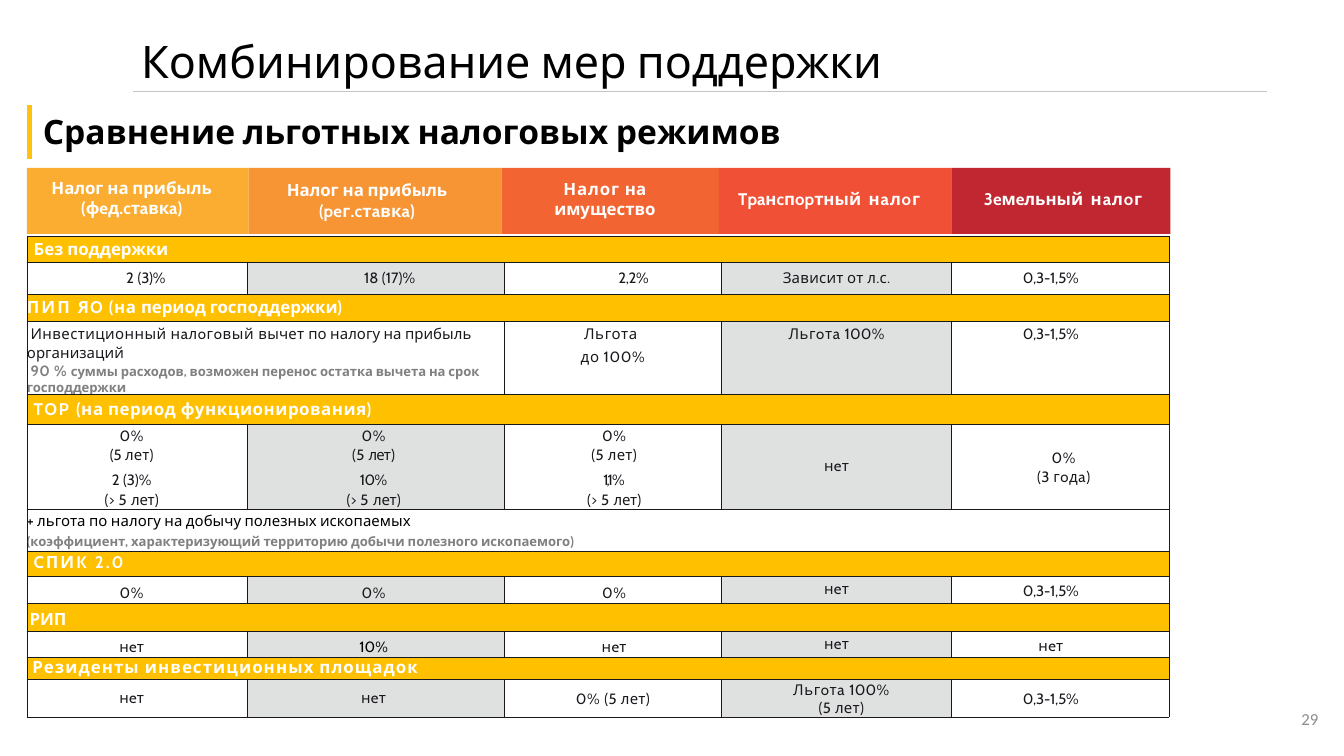
from dataclasses import dataclass
from itertools import pairwise

from lxml.etree import SubElement
from pptx import Presentation
from pptx.dml.color import RGBColor
from pptx.enum.shapes import MSO_CONNECTOR, MSO_SHAPE
from pptx.enum.text import MSO_ANCHOR as ANCHOR, MSO_AUTO_SIZE as FIT, PP_ALIGN as ALIGN
from pptx.oxml.ns import qn
from pptx.util import Inches, Pt

YELLOW, GREY, DARK, WHITE, BLACK, MUTED = "FFC000", "DFE1E1", "1A181D", "FFFFFF", "000000", "808080"
TABLE_LEFT, TABLE_TOP = 0.2, 1.76
COLUMNS = [1.64, 1.91, 1.62, 1.71, 1.62]
RIGHT_MARGINS = [0.08, 0.05, 0, 0, 0.14]
ROWS = [0.19, 0.24, 0.2, 0.54, 0.22, 0.63, 0.31, 0.19, 0.2, 0.21, 0.19, 0.17, 0.28]
HEADER_EDGES = [0.2, 1.85, 3.73, 5.35, 7.08, 8.71]


@dataclass
class Para:
    runs: list
    size: float = 8
    color: str = DARK
    bold: bool = False
    align: ALIGN = ALIGN.CENTER
    indent: float = 0
    before: float = 0
    line: float = 0
    font: str = "Cabin"


@dataclass
class Cell:
    paras: list
    top: float = 0
    anchor: ANCHOR = ANCHOR.MIDDLE
    span: int = 1
    fill: str = ""


def rgb(value):
    return RGBColor.from_string(value)


def write(tf, paras):
    for i, para in enumerate(paras):
        p = tf.paragraphs[0] if i == 0 else tf.add_paragraph()
        p.alignment = para.align
        p.space_before = Pt(para.before)
        if para.line:
            p.line_spacing = Pt(para.line)
        if para.indent:
            p._p.get_or_add_pPr().set("marL", str(Inches(para.indent)))
        p.font.size, p.font.bold, p.font.name = Pt(para.size), para.bold, para.font
        p.font.color.rgb = rgb(para.color)
        for text, spacing, *size in para.runs:
            r = p.add_run()
            r.text = text
            if spacing:
                r._r.get_or_add_rPr().set("spc", str(round(spacing * 100)))
            if size:
                r.font.size = Pt(size[0])


def add_text(s, box, paras, anchor=ANCHOR.TOP, margin=None):
    tf = s.shapes.add_textbox(*map(Inches, box)).text_frame
    tf.word_wrap = True
    tf.vertical_anchor = anchor
    if margin is not None:
        tf.margin_left = tf.margin_right = tf.margin_top = tf.margin_bottom = Inches(margin)
    write(tf, paras)


def add_title(s, box, para):
    sp = s.shapes.title
    sp.left, sp.top, sp.width, sp.height = map(Inches, box)
    tf = sp.text_frame
    tf.auto_size = FIT.NONE
    tf.vertical_anchor = ANCHOR.TOP
    write(tf, [para])


def add_line(s, x1, y1, x2, y2, color, width):
    line = s.shapes.add_connector(MSO_CONNECTOR.STRAIGHT, *map(Inches, (x1, y1, x2, y2)))
    line.line.color.rgb = rgb(color)
    line.line.width = Pt(width)
    SubElement(line._element.spPr, qn("a:effectLst"))


def add_header_box(s, left, right, color):
    sp = s.shapes.add_shape(MSO_SHAPE.RECTANGLE, *map(Inches, (left, 1.25, right - left, 0.49)))
    sp.shadow.inherit = False
    sp.fill.solid()
    sp.fill.fore_color.rgb = rgb(color)
    sp.line.fill.background()


def add_header_text(s, center, middle, width, lines):
    height = 0.15 * len(lines)
    box = (center - width / 2, middle - height / 2, width, height)
    add_text(s, box, [Para(runs, 9, WHITE, True) for runs in lines], margin=0)


def set_borders(cell):
    tcPr = cell._tc.get_or_add_tcPr()
    for i, side in enumerate(("a:lnL", "a:lnR", "a:lnT", "a:lnB")):
        ln = SubElement(tcPr, qn(side), w=str(Pt(0.25)))
        tcPr.insert(i, ln)
        SubElement(SubElement(ln, qn("a:solidFill")), qn("a:srgbClr"), val=DARK)


def fill_cell(cell, content, fill, right):
    cell.margin_left = cell.margin_bottom = 0
    cell.margin_right = Inches(right)
    cell.margin_top = Inches(content.top)
    cell.vertical_anchor = content.anchor
    write(cell.text_frame, content.paras)
    if fill:
        cell.fill.solid()
        cell.fill.fore_color.rgb = rgb(fill)
    else:
        cell.fill.background()


def add_grid(s, rows):
    size = (TABLE_LEFT, TABLE_TOP, sum(COLUMNS), sum(ROWS))
    table = s.shapes.add_table(len(ROWS), len(COLUMNS), *map(Inches, size)).table
    table.first_row = table.horz_banding = False
    for column, width in zip(table.columns, COLUMNS):
        column.width = Inches(width)
    for i, (height, cells) in enumerate(zip(ROWS, rows)):
        table.rows[i].height = Inches(height)
        j = 0
        for content in cells:
            cell = table.cell(i, j)
            if content.span > 1:
                cell.merge(table.cell(i, j + content.span - 1))
            right = RIGHT_MARGINS[j] if content.span == 1 else 0
            fill_cell(cell, content, content.fill or (GREY if j in (1, 3) else ""), right)
            j += content.span
        for cell in table.rows[i].cells:
            set_borders(cell)


def band(*runs, indent=0.05, line=0, top=0, anchor=ANCHOR.MIDDLE):
    para = Para(list(runs), 9, WHITE, True, ALIGN.LEFT, indent, line=line)
    return [Cell([para], top, anchor, 5, YELLOW)]


def value(*runs, top=0, indent=0, color=DARK):
    anchor = ANCHOR.TOP if top else ANCHOR.MIDDLE
    return Cell([Para(list(runs), color=color, indent=indent)], top, anchor)


def terms(*lines, indent=0.02):
    return Cell([Para(runs, indent=indent, line=10.4, before=3.2 if i == 2 else 0)
                 for i, runs in enumerate(lines)], 0.01)


def note(text, **style):
    return Para(text, align=ALIGN.LEFT, **style)


def table_rows():
    no, zero, land = ("нeт", 0.1), ("0%", 0.3), ("0,3-1,5%", -0.1)
    five = [("(5 ", 0.2), ("лет)", 0.1)]
    after = [("(> ", 0.1), ("5 ", 0.3), ("лет", -0.2), (")", 0.1)]
    deduction = Cell([
        note([(" Инвестиционный ", 0.2), ("нaлoгoвый ", 0.3), ("вычет ", 0.1),
              ("по налогу на прибыль организаций", 0)]),
        note([(" 90 % ", 0.2, 8),
              ("суммы расходов, возможен перенос остатка вычета на срок господдержки", 0)],
             size=7, color=MUTED, bold=True)], 0.03, ANCHOR.TOP, 2)
    relief = Cell([Para([(text, 0.3)], before=2.5) for text in ("Льгота ", "до 100%")], 0.03, ANCHOR.TOP)
    mining = Cell([
        note([("+ льгота по налогу на добычу полезных ископаемых", 0)], color=BLACK, line=10.4),
        note([("(коэффициент, характеризующий территорию добычи полезного ископаемого)", 0)],
             size=7, color=MUTED, bold=True, line=10.4)], 0.01, span=5)
    full = [("Льгoтa ", 0.3), ("100%", 0.1)]
    return [
        band(("Без поддержки", 0), line=11),
        [value(("2 ", 0.1), ("(3)%", -0.1), indent=0.21), value(("18 (17)%", 0), indent=0.26),
         value(("2,2%", -0.2), indent=0.31), value(("Зависит от л.с.", 0.1)), value(land)],
        band(("ПИП ", 1.1), ("ЯO ", 0.6), ("(на ", 0.3), ("период господдержки", 0), (")", 0.6), indent=0),
        [deduction, relief, value(*full, top=0.03), value(land, top=0.03)],
        band(("TOP ", 0.9), ("(на период функционирования", 0.3), (")", 0.5), line=11.3),
        [terms([zero], [("(5 лет)", 0)], [("2 (3)%", 0)], after, indent=0),
         terms([zero], [("(5 ", 0.2), ("лет", -0.5), (")", 0.1)], [("10%", -0.3)], after),
         terms([zero], five, [("1,1 %", -1.1)], after),
         value(no), terms([zero], [("(3 ", 0.1), ("гoдa)", 0.3)], indent=0.19)],
        [mining],
        band(("CПИK 2.0", 1.1), line=11.9, anchor=ANCHOR.TOP),
        [value(zero, top=0.06), *[value(zero, top=0.06, indent=0.02)] * 2,
         value(no, top=0.03), value(land, top=0.04)],
        band(("РИП", 0), indent=0.02, top=0.05, anchor=ANCHOR.TOP),
        [value(no, top=0.05), value(("10%", 0), top=0.05, indent=0.02, color=BLACK),
         value(no, top=0.05, indent=0.02), value(no, top=0.03), value(no, top=0.04)],
        band(("Резиденты инвестиционных площадок", 0.6), line=11.3, indent=0.04, anchor=ANCHOR.TOP),
        [value(no, top=0.07), value(no, top=0.07, indent=0.02), value(("0% ", 0.3), *five, top=0.08),
         Cell([Para(full, indent=0.07), Para(five, indent=0.07)], 0.01), value(land, top=0.08)],
    ]


def main():
    prs = Presentation()
    prs.slide_width, prs.slide_height = Inches(10), Inches(10 * 9 / 16)
    s = prs.slides.add_slide(prs.slide_layouts[5])
    add_line(s, 0.99, 0.68, 9.43, 0.68, "C4C4C4", 0.5)
    add_title(s, (0.95, 0.2, 8.53, 0.5),
              Para([("Комбинирование мер поддержки", 0)], 24, BLACK, align=ALIGN.LEFT))
    headers = [
        ("FBAD31", 0.98, 1.47, 1.63, [[("Налог на прибыль", 0)], [("(фeд.cтaвкa)", 0)]]),
        ("F79433", 2.73, 1.49, 1.69, [[("Налог на прибыль", 0)], [("(peг.cтaвкa)", 0.1)]]),
        ("F26532", 4.5, 1.48, 1.6, [[("Налог ", 0.5), ("на", 0)], [("имущество", 0)]]),
        ("F05035", 6.17, 1.48, 1.66, [[("T", -0.6), ("paнcпopтный", 0), (" ", 2), ("нaлoг", 0.5)]]),
        ("C02730", 7.91, 1.48, 1.55, [[("3eмeльный", 0), (" ", 2), ("нaлoг", 0.5)]]),
    ]
    for (left, right), (color, *_) in zip(pairwise(HEADER_EDGES), headers):
        add_header_box(s, left, right, color)
    for _, center, middle, width, lines in headers:
        add_header_text(s, center, middle, width, lines)
    add_grid(s, table_rows())
    add_text(s, (0.22, 0.78, 7.14, 0.4),
             [Para([("Сравнение льготных налоговых режимов", 0)], 18, BLACK, True, ALIGN.LEFT)])
    add_line(s, 0.22, 0.78, 0.22, 1.18, "FFC20E", 2.5)
    add_text(s, (7.56, 5.2, 2.25, 0.3),
             [Para([("29", 0)], 9, "8C8C8C", align=ALIGN.RIGHT, font="Calibri")], ANCHOR.MIDDLE, 0)
    prs.save("out.pptx")


if __name__ == "__main__":
    main()
